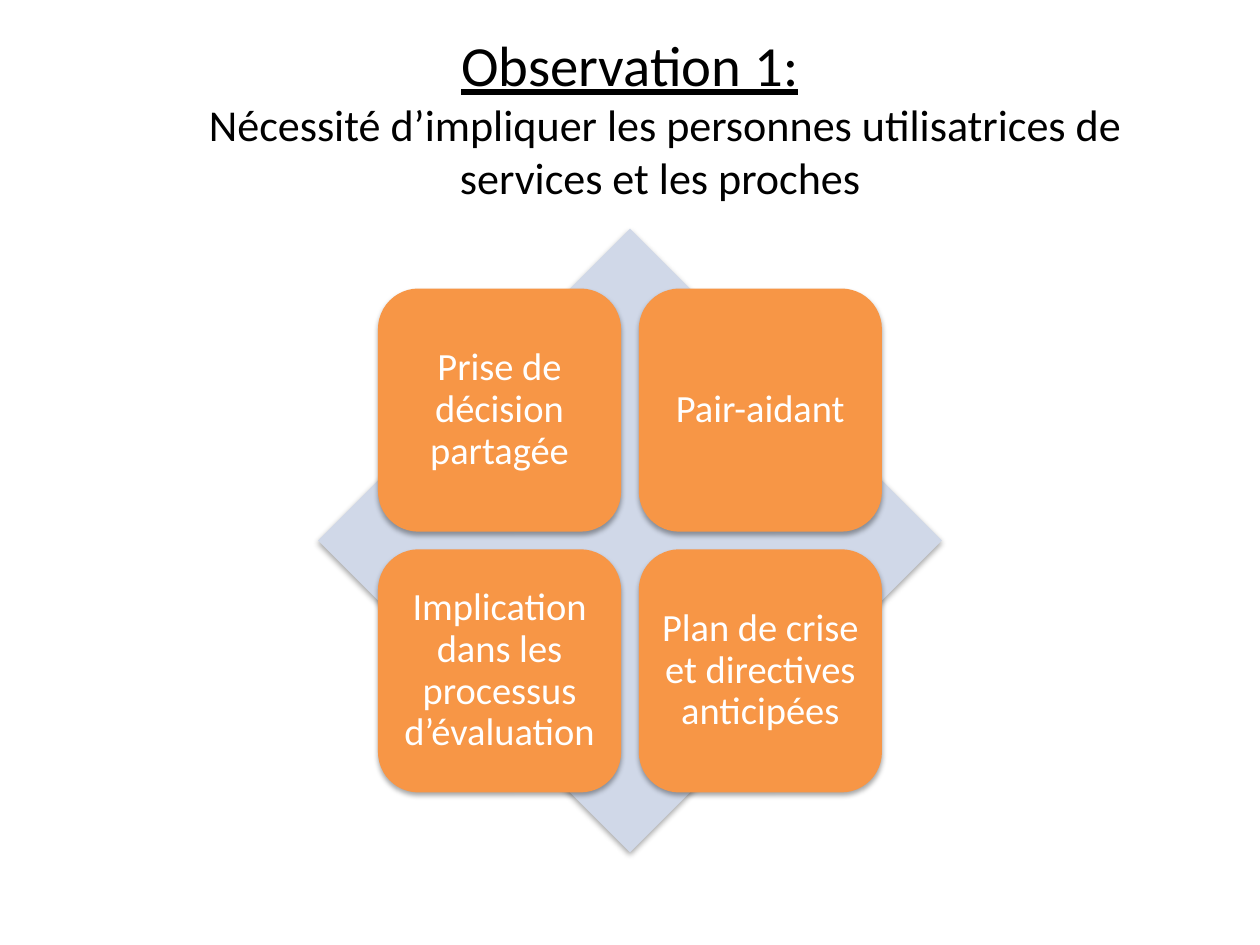
from lxml.etree import SubElement
from pptx import Presentation
from pptx.dml.color import RGBColor
from pptx.enum.shapes import MSO_SHAPE as Shape
from pptx.enum.text import MSO_ANCHOR as Anchor, MSO_AUTO_SIZE as AutoSize, PP_ALIGN as Align
from pptx.oxml.ns import qn
from pptx.util import Inches, Pt

HEADING = "Observation 1:"
SUBHEADING = "Nécessité d’impliquer les personnes utilisatrices de services et les proches "
CARDS = [
    ["Prise de décision partagée", "Pair-aidant"],
    ["Implication dans les processus d’évaluation", "Plan de crise et directives anticipées"],
]

FONT = "Calibri"
BLACK = RGBColor(0x00, 0x00, 0x00)
WHITE = RGBColor(0xFF, 0xFF, 0xFF)
ORANGE = RGBColor(0xF7, 0x96, 0x46)
PALE_BLUE = RGBColor(0xD0, 0xD8, 0xE8)

CENTER_X, CENTER_Y = 5, 4.29
DIAMOND_SIZE = 4.95
CARD_SIZE, CARD_PITCH = 1.93, 2.07
CARD_INSET = 0.09


def add_span(para, text, *, size, color, underline=False):
    span = para.add_run()
    span.text = text
    span.font.name = FONT
    span.font.size = Pt(size)
    span.font.color.rgb = color
    span.font.underline = underline


def add_shadow(shape):
    """Give the shape a soft shadow that falls straight down."""
    shape.shadow.inherit = False
    effects = shape._element.spPr.find(qn("a:effectLst"))
    shadow = SubElement(effects, qn("a:outerShdw"), blurRad=str(Pt(3.1)), dist=str(Pt(1.8)),
                        dir="5400000", rotWithShape="0")
    color = SubElement(shadow, qn("a:srgbClr"), val=str(BLACK))
    SubElement(color, qn("a:alpha"), val="35000")


def add_square(slide, kind, center_x, center_y, size, fill):
    """Add a filled shape of equal width and height around a center point."""
    shape = slide.shapes.add_shape(kind, Inches(center_x - size / 2), Inches(center_y - size / 2),
                                   Inches(size), Inches(size))
    shape.fill.solid()
    shape.fill.fore_color.rgb = fill
    shape.line.fill.background()
    add_shadow(shape)
    return shape


def add_title(slide):
    title = slide.shapes.title
    title.left, title.top = Inches(0.5), Inches(0.3)
    title.width, title.height = Inches(9), Inches(1.25)
    frame = title.text_frame
    frame.auto_size = AutoSize.NONE
    frame.vertical_anchor = Anchor.MIDDLE
    para = frame.paragraphs[0]
    para.alignment = Align.CENTER
    properties = para._p.get_or_add_pPr()
    properties.set("marL", str(Inches(0.56)))
    properties.set("indent", str(Inches(-0.56)))
    add_span(para, HEADING, size=32.4, color=BLACK, underline=True)
    para.add_line_break()
    add_span(para, SUBHEADING, size=25.2, color=BLACK)


def add_card(slide, row, column, text):
    card = add_square(slide, Shape.ROUNDED_RECTANGLE,
                      CENTER_X + (column - 0.5) * CARD_PITCH,
                      CENTER_Y + (row - 0.5) * CARD_PITCH, CARD_SIZE, ORANGE)
    frame = card.text_frame
    frame.word_wrap = True
    frame.vertical_anchor = Anchor.MIDDLE
    frame.margin_left = frame.margin_right = Inches(CARD_INSET)
    frame.margin_top = frame.margin_bottom = Inches(CARD_INSET)
    para = frame.paragraphs[0]
    para.alignment = Align.CENTER
    para.line_spacing = 0.9
    add_span(para, text, size=22, color=WHITE)


def main():
    deck = Presentation()
    deck.slide_width, deck.slide_height = Inches(10), Inches(7.5)
    slide = deck.slides.add_slide(deck.slide_layouts[5])
    add_title(slide)
    add_square(slide, Shape.DIAMOND, CENTER_X, CENTER_Y, DIAMOND_SIZE, PALE_BLUE)
    for row, texts in enumerate(CARDS):
        for column, text in enumerate(texts):
            add_card(slide, row, column, text)
    deck.save("out.pptx")


if __name__ == "__main__":
    main()
